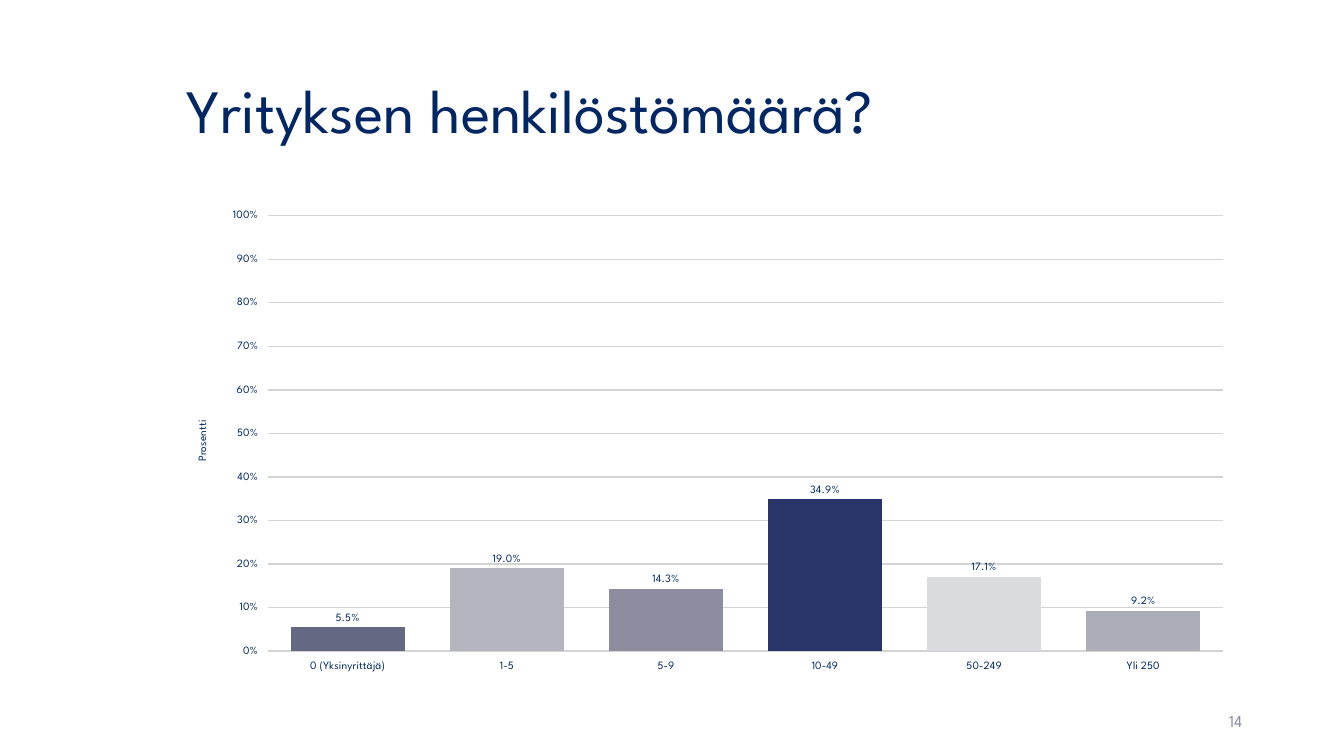
from typing import NamedTuple

from lxml import etree
from pptx import Presentation
from pptx.chart.data import CategoryChartData
from pptx.dml.color import RGBColor
from pptx.enum import chart as charts, text
from pptx.oxml import ns
from pptx.util import Inches, Pt

FONT = "League Spartan"
NAVY = "002663"
GRAY = "8C8E9F"


class Area(NamedTuple):
    left: float
    top: float
    width: float
    height: float

    def lengths(self):
        return [Inches(value) for value in self]


class Bar(NamedTuple):
    staff: str
    share: float
    color: str


TITLE_AREA = Area(1.75, 0.4, 10.59, 1.45)
NUMBER_AREA = Area(9.42, 6.95, 3, 0.4)
CHART_AREA = Area(1.75, 2, 10.59, 4.76)
PLOT_AREA = Area(2.66, 2.14, 9.47, 4.32)

BARS = [
    Bar("0 (Yksinyrittäjä)", 0.055, "646883"),
    Bar("1-5", 0.19, "B4B5BF"),
    Bar("5-9", 0.143, GRAY),
    Bar("10-49", 0.349, "293568"),
    Bar("50-249", 0.171, "DADBDF"),
    Bar("Yli 250", 0.092, "ABADB7"),
]


def rgb(color: str) -> RGBColor:
    return RGBColor.from_string(color)


def style_font(font, size: float, color: str = NAVY) -> None:
    font.name = FONT
    font.size = Pt(size)
    font.bold = False
    font.color.rgb = rgb(color)


def add_title(page, wording: str) -> None:
    title = page.shapes.title
    title.left, title.top, title.width, title.height = TITLE_AREA.lengths()
    frame = title.text_frame
    frame.text = wording
    frame.auto_size = text.MSO_AUTO_SIZE.NONE
    frame.vertical_anchor = text.MSO_ANCHOR.MIDDLE
    para = frame.paragraphs[0]
    para.alignment = text.PP_ALIGN.LEFT
    para.line_spacing = 0.9
    style_font(para.runs[0].font, 44)


def add_page_number(page, number: str) -> None:
    frame = page.shapes.add_textbox(*NUMBER_AREA.lengths()).text_frame
    frame.text = number
    frame.word_wrap = True
    frame.vertical_anchor = text.MSO_ANCHOR.MIDDLE
    para = frame.paragraphs[0]
    para.alignment = text.PP_ALIGN.RIGHT
    para.space_after = Pt(6)
    style_font(para.runs[0].font, 12, GRAY)


def place_plot(chart, outer: Area, inner: Area) -> None:
    """Fix the plot's inner rectangle as fractions of the chart frame."""
    plot_area = chart.plots[0]._element.getparent()
    for layout in plot_area.findall(ns.qn("c:layout")):
        plot_area.remove(layout)
    layout = etree.Element(ns.qn("c:layout"))
    manual = etree.SubElement(layout, ns.qn("c:manualLayout"))
    settings = {
        "layoutTarget": "inner",
        "xMode": "edge",
        "yMode": "edge",
        "x": (inner.left - outer.left) / outer.width,
        "y": (inner.top - outer.top) / outer.height,
        "w": inner.width / outer.width,
        "h": inner.height / outer.height,
    }
    for tag, value in settings.items():
        etree.SubElement(manual, ns.qn(f"c:{tag}")).set("val", str(value))
    plot_area.insert(0, layout)


def style_axes(chart) -> None:
    for axis in (chart.category_axis, chart.value_axis):
        style_font(axis.tick_labels.font, 8)
        axis.format.line.fill.background()
        axis.major_tick_mark = charts.XL_TICK_MARK.OUTSIDE
    chart.category_axis.has_major_gridlines = False
    shares = chart.value_axis
    shares.minimum_scale, shares.maximum_scale = 0, 1
    shares.major_unit = 0.1
    shares.tick_labels.number_format = "0%"
    shares.tick_labels.number_format_is_linked = False
    shares.has_major_gridlines = True
    shares.major_gridlines.format.line.color.rgb = rgb("D3D3D3")
    shares.major_gridlines.format.line.width = Pt(1)
    para = shares.axis_title.text_frame.paragraphs[0]
    para.text = "Prosentti"
    style_font(para.runs[0].font, 8)


def add_staff_chart(page) -> None:
    data = CategoryChartData()
    data.categories = [bar.staff for bar in BARS]
    data.add_series("Series 1", [bar.share for bar in BARS])
    chart = page.shapes.add_chart(
        charts.XL_CHART_TYPE.COLUMN_CLUSTERED, *CHART_AREA.lengths(), data
    ).chart
    chart.has_title = False
    chart.has_legend = False
    style_font(chart.font, 18)
    style_axes(chart)
    plot = chart.plots[0]
    plot.vary_by_categories = False
    plot.gap_width = 40
    plot.overlap = -2
    series = plot.series[0]
    for index, bar in enumerate(BARS):
        fill = series.points[index].format.fill
        fill.solid()
        fill.fore_color.rgb = rgb(bar.color)
    labels = series.data_labels
    labels.show_value = True
    labels.number_format = "0.0%"
    labels.number_format_is_linked = False
    labels.position = charts.XL_LABEL_POSITION.OUTSIDE_END
    style_font(labels.font, 8)
    place_plot(chart, CHART_AREA, PLOT_AREA)


def main() -> None:
    deck = Presentation()
    deck.slide_width, deck.slide_height = Inches(13.33), Inches(7.5)
    page = deck.slides.add_slide(deck.slide_layouts.get_by_name("Title Only"))
    add_title(page, "Yrityksen henkilöstömäärä?")
    add_page_number(page, "14")
    add_staff_chart(page)
    deck.save("out.pptx")


if __name__ == "__main__":
    main()
